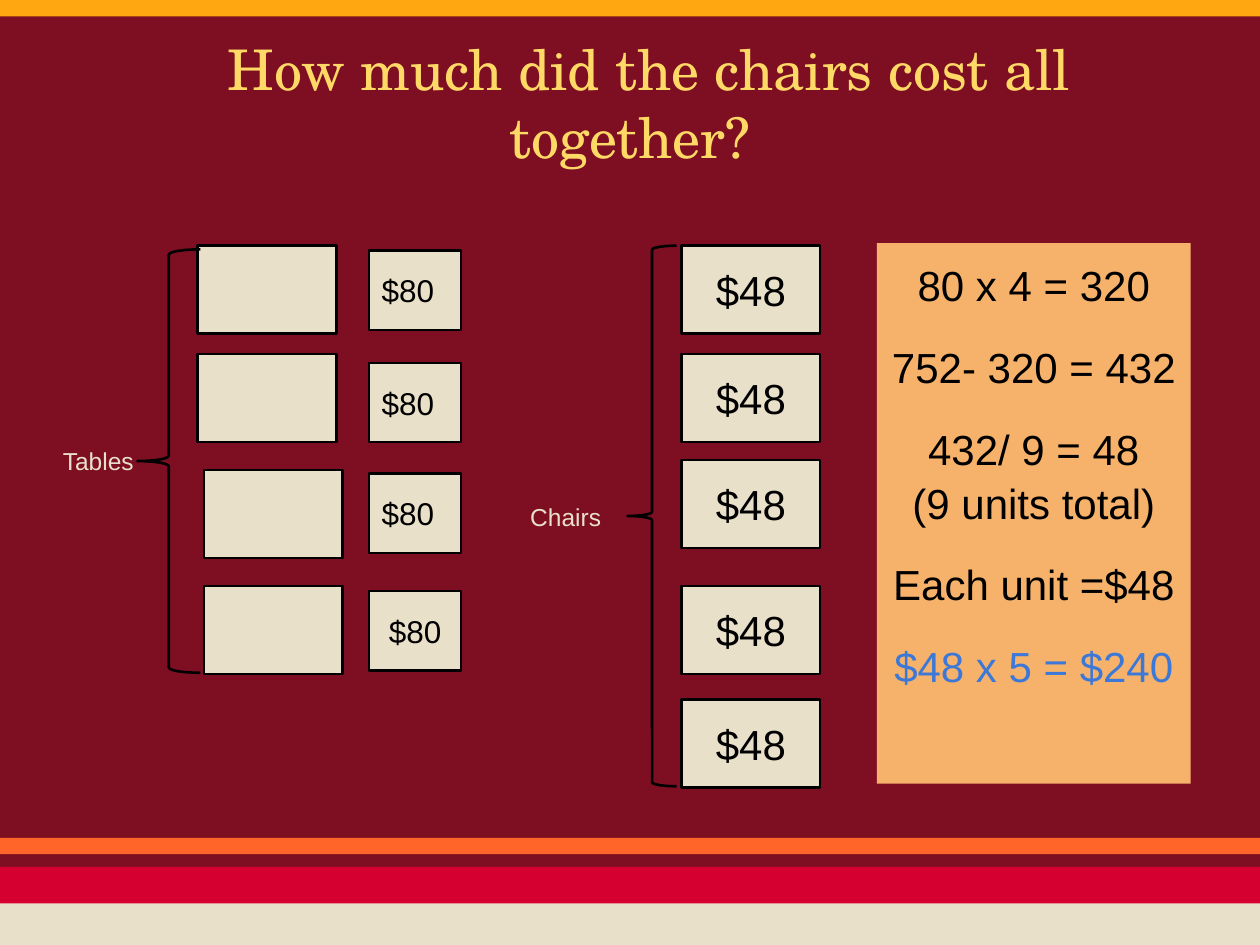
from pptx import Presentation
from pptx.dml.color import RGBColor
from pptx.enum.shapes import MSO_SHAPE
from pptx.enum.text import MSO_ANCHOR, MSO_AUTO_SIZE, PP_ALIGN
from pptx.util import Inches, Pt

# Content
TITLE = "How much did the chairs cost all together?"
BANDS = [(0, 0.13, "FFA711"), (6.88, 0.33, "D60030"),
         (7.17, 0.33, "E9E0C9"), (6.65, 0.13, "FF6428")]  # top, height, colour
TABLES = [(1.57, 1.95), (1.57, 2.81), (1.62, 3.73), (1.62, 4.65)]  # left, top
TABLE_PRICES = [(1.99, "l"), (2.88, "l"), (3.76, "l"), (4.69, "ctr")]  # top, align
CHAIR_TOPS = [1.95, 2.81, 3.65, 4.65, 5.55]
BRACES = [(1.09, 1.98, 0.5, 3.36), (4.98, 1.95, 0.39, 4.29)]
LABELS = [("Tables", (0.34, 3.41, 0.88, 0.49)), ("Chairs", (4, 3.8, 0.98, 0.6))]
STEPS = [  # text, space before, colour
    ("80 x 4 = 320", 0, "000000"),
    ("752- 320 = 432", 16, "000000"),
    ("432/ 9 = 48", 16, "000000"),
    ("(9 units total)", 0, "000000"),
    ("Each unit =$48", 16, "000000"),
    ("$48 x 5 = $240", 16, "3C78D8"),
]
CREAM, BLACK = "E9E0C9", "000000"
ALIGN = {"l": PP_ALIGN.LEFT, "ctr": PP_ALIGN.CENTER}
FRAME = dict(word_wrap=True, auto_size=MSO_AUTO_SIZE.NONE,
             margin_left=Inches(0.1), margin_right=Inches(0.1),
             margin_top=Inches(0.1), margin_bottom=Inches(0.1))


def rgb(value):
    return RGBColor.from_string(value)


def apply(obj, values):
    for name, value in values.items():
        setattr(obj, name, value)


def set_frame(tf, anchor=MSO_ANCHOR.MIDDLE):
    apply(tf, FRAME)
    tf.vertical_anchor = anchor


def write(p, text, size, color=BLACK, align="ctr", font="Arial"):
    p.alignment = ALIGN[align]
    r = p.add_run()
    r.text = text
    apply(r.font, dict(size=Pt(size), name=font))
    r.font.color.rgb = rgb(color)


def add_shape(s, box, fill=None, line=None, kind=MSO_SHAPE.RECTANGLE):
    sp = s.shapes.add_shape(kind, *map(Inches, box))
    sp.shadow.inherit = False
    if fill:
        sp.fill.solid()
        sp.fill.fore_color.rgb = rgb(fill)
    else:
        sp.fill.background()
    if line:
        sp.line.color.rgb = rgb(line)
        sp.line.width = Pt(1.5)
    else:
        sp.line.fill.background()
    return sp


def add_price(s, box, text, size, align="ctr"):
    tf = add_shape(s, box, CREAM, BLACK).text_frame
    set_frame(tf)
    write(tf.paragraphs[0], text, size, align=align)


def main():
    prs = Presentation()
    prs.slide_width, prs.slide_height = Inches(10), Inches(7.5)
    s = prs.slides.add_slide(prs.slide_layouts[5])
    s.background.fill.solid()
    s.background.fill.fore_color.rgb = rgb("7E0F23")

    # Colour bands
    for top, height, color in BANDS:
        add_shape(s, (0, top, 10, height), color)

    # Title
    title = s.shapes.title
    apply(title, dict(left=Inches(0.5), top=Inches(0.3),
                      width=Inches(9), height=Inches(1.02)))
    set_frame(title.text_frame)
    p = title.text_frame.paragraphs[0]
    write(p, TITLE, 32, "FFD966", font="TeX Gyre Schola")
    p._p.get_or_add_pPr().set("indent", str(Inches(0.31)))

    # Tables, chairs and their prices
    for left, top in TABLES:
        add_shape(s, (left, top, 1.1, 0.7), CREAM, BLACK)
    for top in CHAIR_TOPS:
        add_price(s, (5.41, top, 1.1, 0.7), "$48", 24)
    for top, align in TABLE_PRICES:
        add_price(s, (2.93, top, 0.73, 0.63), "$80", 18, align)

    # Braces and their labels
    for box in BRACES:
        add_shape(s, box, line=BLACK, kind=MSO_SHAPE.LEFT_BRACE)
    for text, box in LABELS:
        tf = s.shapes.add_textbox(*map(Inches, box)).text_frame
        set_frame(tf)
        write(tf.paragraphs[0], text, 14, CREAM)

    # Worked steps
    tf = add_shape(s, (6.96, 1.93, 2.49, 4.29), "F6B26B").text_frame
    set_frame(tf, MSO_ANCHOR.TOP)
    for i, (text, before, color) in enumerate(STEPS):
        p = tf.add_paragraph() if i else tf.paragraphs[0]
        apply(p, dict(space_before=Pt(before), line_spacing=1.07))
        write(p, text, 24, color)

    prs.save("out.pptx")


if __name__ == "__main__":
    main()
